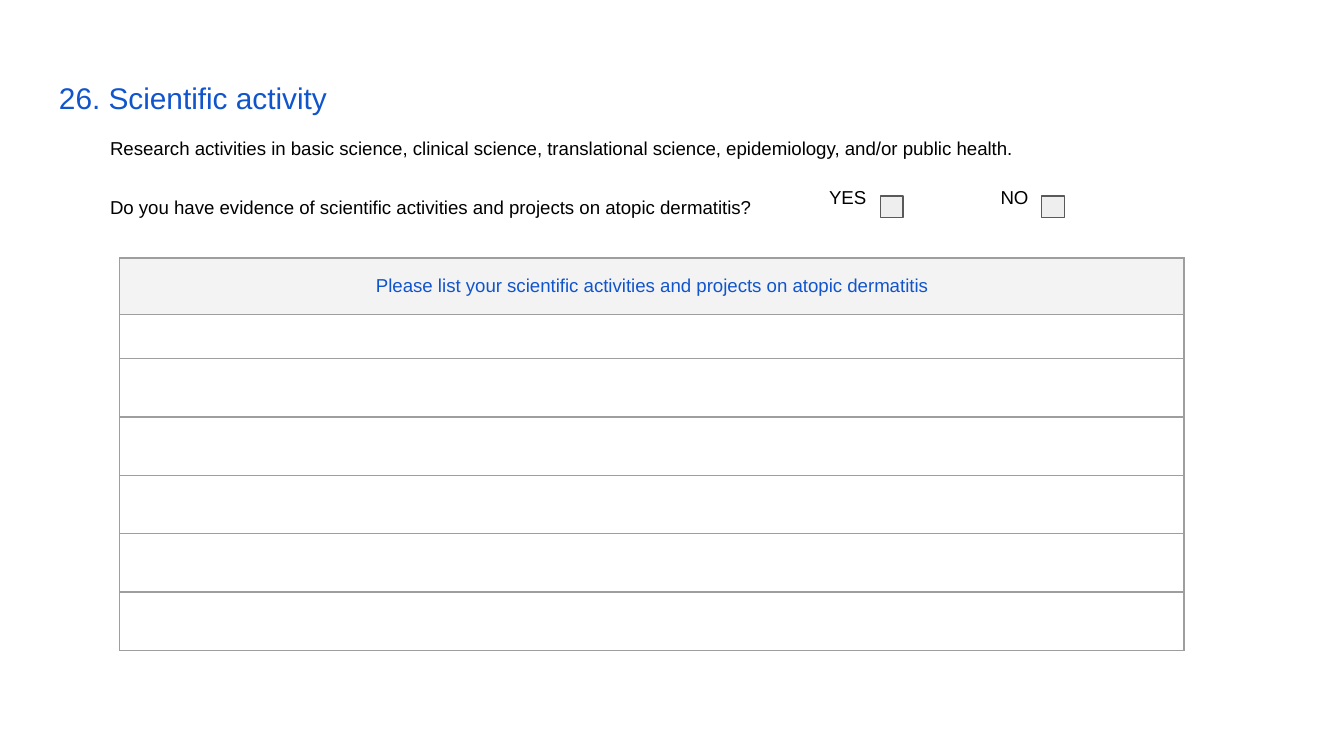
import pptx
import pptx.dml.color
import pptx.enum.shapes
import pptx.enum.text
import pptx.oxml.ns
import pptx.util
from lxml import etree

Inches, Pt = pptx.util.Inches, pptx.util.Pt
ALIGN = pptx.enum.text.PP_ALIGN
BLUE, BLACK, GREY = "1155CC", "000000", "9E9E9E"


def color(value):
    return pptx.dml.color.RGBColor.from_string(value)


class Form:
    font = "Arial"
    inset = 0.1

    def __init__(self, prs):
        self.s = prs.slides.add_slide(prs.slide_layouts[6])

    def style(self, p, size, ink, align):
        p.alignment = align
        for r in p.runs:
            r.font.name, r.font.size = self.font, Pt(size)
            r.font.color.rgb = color(ink)

    def text(self, text, x, y, w, h, size=10, ink=BLACK, align=ALIGN.LEFT,
             spacing=1.0, before=0, after=0, left=inset, right=inset):
        tf = self.s.shapes.add_textbox(Inches(x), Inches(y), Inches(w), Inches(h)).text_frame
        tf.word_wrap = True
        tf.margin_top = tf.margin_bottom = Inches(self.inset)
        tf.margin_left, tf.margin_right = Inches(left), Inches(right)
        tf.text = text
        p = tf.paragraphs[0]
        p.line_spacing, p.space_before, p.space_after = spacing, Pt(before), Pt(after)
        self.style(p, size, ink, align)

    def checkbox(self, x, y):
        sp = self.s.shapes.add_shape(pptx.enum.shapes.MSO_SHAPE.RECTANGLE,
                                     Inches(x), Inches(y), Inches(0.17), Inches(0.16))
        sp.shadow.inherit = False
        sp.fill.solid()
        sp.fill.fore_color.rgb = color("EEEEEE")
        sp.line.color.rgb = color("595959")
        sp.line.width = Pt(0.75)

    def borders(self, cell):
        qn = pptx.oxml.ns.qn
        tc_pr = cell._tc.get_or_add_tcPr()
        for i, side in enumerate(("a:lnL", "a:lnR", "a:lnT", "a:lnB")):
            ln = etree.Element(qn(side), w=str(Pt(0.75)))
            fill = etree.SubElement(ln, qn("a:solidFill"))
            etree.SubElement(fill, qn("a:srgbClr"), val=GREY)
            tc_pr.insert(i, ln)

    def table(self, header, x, y, w, heights):
        table = self.s.shapes.add_table(len(heights), 1, Inches(x), Inches(y),
                                        Inches(w), Inches(sum(heights))).table
        for i, height in enumerate(heights):
            table.rows[i].height = Inches(height)
            cell = table.cell(i, 0)
            cell.margin_left = cell.margin_right = Inches(self.inset)
            cell.margin_top = cell.margin_bottom = 0
            cell.vertical_anchor = pptx.enum.text.MSO_ANCHOR.MIDDLE
            if i == 0:
                cell.text = header
                self.style(cell.text_frame.paragraphs[0], 10, BLUE, ALIGN.CENTER)
                cell.fill.solid()
                cell.fill.fore_color.rgb = color("F3F3F3")
            else:
                cell.fill.background()
            self.borders(cell)


def main():
    prs = pptx.Presentation()
    # Widescreen, 16:9
    prs.slide_width, prs.slide_height = Inches(10), Inches(10 * 9 / 16)
    form = Form(prs)

    # Heading and introduction
    form.text("26. Scientific activity", 0.34, 0.49, 9.32, 0.63, size=16, ink=BLUE)
    form.text("Research activities in basic science, clinical science, translational science, "
              "epidemiology, and/or public health.",
              0.72, 0.9, 9.32, 0.86, spacing=1.15, after=12)

    # Question with its two answers
    form.text("Do you have evidence of scientific activities and projects on atopic dermatitis?",
              0.72, 1.37, 5.12, 0.37)
    answer = dict(spacing=1.15, before=6, after=12)
    form.text("YES", 6.07, 1.26, 0.48, 0.65, right=0, **answer)
    form.checkbox(6.55, 1.46)
    form.text("NO", 7.34, 1.26, 0.41, 0.65, align=ALIGN.RIGHT, left=0, **answer)
    form.checkbox(7.75, 1.46)

    # List to fill in: a header, a short row and five equal rows
    form.table("Please list your scientific activities and projects on atopic dermatitis",
               0.89, 1.92, 7.92, [0.42, 0.33] + [2.17 / 5] * 5)

    prs.save("out.pptx")


if __name__ == "__main__":
    main()
